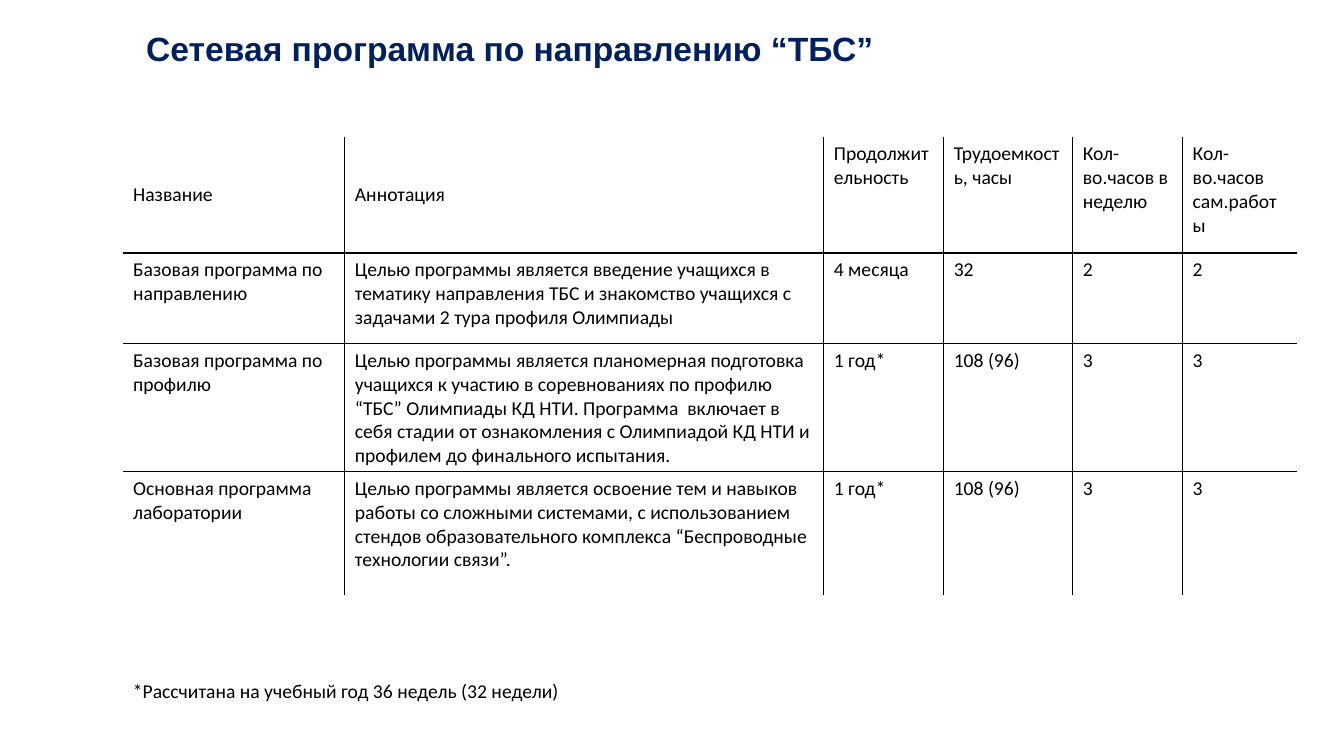
from lxml import etree
from pptx import Presentation
from pptx.dml.color import RGBColor
from pptx.enum.text import MSO_ANCHOR, MSO_AUTO_SIZE, PP_ALIGN
from pptx.oxml.ns import qn
from pptx.util import Inches, Pt

TOP, MIDDLE = MSO_ANCHOR.TOP, MSO_ANCHOR.MIDDLE
LEFT = PP_ALIGN.LEFT
NO_AUTOFIT = MSO_AUTO_SIZE.NONE
TITLE_ONLY = 5

COLUMN_WIDTHS = [2.2, 4.75, 1.19, 1.28, 1.09, 1.13]
ROW_HEIGHTS = [1.15, 0.9, 1.27, 1.22]
PROGRAMS = [
    ["Название", "Аннотация", "Продолжительность", "Трудоемкость, часы",
     "Кол-во.часов в неделю", "Кол-во.часов сам.работы"],
    ["Базовая программа по направлению",
     "Целью программы является введение учащихся в тематику направления ТБС "
     "и знакомство учащихся с задачами 2 тура профиля Олимпиады",
     "4 месяца", "32", "2", "2"],
    ["Базовая программа по профилю",
     "Целью программы является планомерная подготовка учащихся к участию в "
     "соревнованиях по профилю “ТБС” Олимпиады КД НТИ. Программа  включает в "
     "себя стадии от ознакомления с Олимпиадой КД НТИ и профилем до "
     "финального испытания.",
     "1 год*", "108 (96)", "3", "3"],
    ["Основная программа лаборатории",
     "Целью программы является освоение тем и навыков работы со сложными "
     "системами, с использованием стендов образовательного комплекса "
     "“Беспроводные технологии связи”.",
     "1 год*", "108 (96)", "3", "3"],
]


def color(hex_string):
    return RGBColor.from_string(hex_string)


class SlideBuilder:
    title_font = "Arial"
    body_font = "Calibri"
    title_color = "002060"
    ink = "000000"

    def __init__(self, presentation):
        self.slide = presentation.slides.add_slide(
            presentation.slide_layouts[TITLE_ONLY])

    def set_text(self, text_frame, text, size, font_name, hex_string, bold=False):
        text_frame.text = text
        paragraph = text_frame.paragraphs[0]
        paragraph.alignment = LEFT
        font = paragraph.runs[0].font
        font.size, font.name, font.bold = Pt(size), font_name, bold
        font.color.rgb = color(hex_string)

    def title(self, text, left, top, width, height):
        shape = self.slide.shapes.title
        shape.left, shape.top = Inches(left), Inches(top)
        shape.width, shape.height = Inches(width), Inches(height)
        text_frame = shape.text_frame
        text_frame.auto_size = NO_AUTOFIT
        text_frame.vertical_anchor = TOP
        self.set_text(text_frame, text, 24, self.title_font, self.title_color, True)

    def note(self, text, left, top, width, height):
        shape = self.slide.shapes.add_textbox(
            Inches(left), Inches(top), Inches(width), Inches(height))
        shape.text_frame.word_wrap = False
        self.set_text(shape.text_frame, text, 14, self.body_font, self.ink)

    def border(self, cell, side, visible):
        properties = cell._tc.get_or_add_tcPr()
        line = etree.SubElement(properties, qn(f"a:ln{side}"), w=str(Pt(1)))
        if visible:
            fill = etree.SubElement(line, qn("a:solidFill"))
            etree.SubElement(fill, qn("a:srgbClr"), val=self.ink)
        else:
            etree.SubElement(line, qn("a:noFill"))

    def table(self, rows, left, top, widths, heights):
        """Draw a table ruled between its cells and open at its outer edges."""
        table = self.slide.shapes.add_table(
            len(rows), len(widths), Inches(left), Inches(top),
            Inches(sum(widths)), Inches(sum(heights))).table
        table.first_row = table.horz_banding = False
        for column, width in zip(table.columns, widths):
            column.width = Inches(width)
        for row, height in zip(table.rows, heights):
            row.height = Inches(height)
        last_row, last_column = len(rows) - 1, len(widths) - 1
        for i, texts in enumerate(rows):
            for j, text in enumerate(texts):
                cell = table.cell(i, j)
                inner_sides = {"L": j > 0, "R": j < last_column,
                               "T": i > 0, "B": i < last_row}
                for side, visible in inner_sides.items():
                    self.border(cell, side, visible)
                cell.fill.background()
                cell.vertical_anchor = MIDDLE if i == 0 and j < 2 else TOP
                self.set_text(cell.text_frame, text, 14, self.body_font, self.ink)


def main():
    presentation = Presentation()
    presentation.slide_width = Inches(13.33)
    presentation.slide_height = Inches(7.5)
    builder = SlideBuilder(presentation)
    builder.title("Сетевая программа по направлению “ТБС”", 1.35, 0.23, 7.75, 0.5)
    builder.note("*Рассчитана на учебный год 36 недель (32 недели)",
                 1.22, 6.69, 4.47, 0.34)
    builder.table(PROGRAMS, 1.22, 1.36, COLUMN_WIDTHS, ROW_HEIGHTS)
    presentation.save("out.pptx")


if __name__ == "__main__":
    main()
